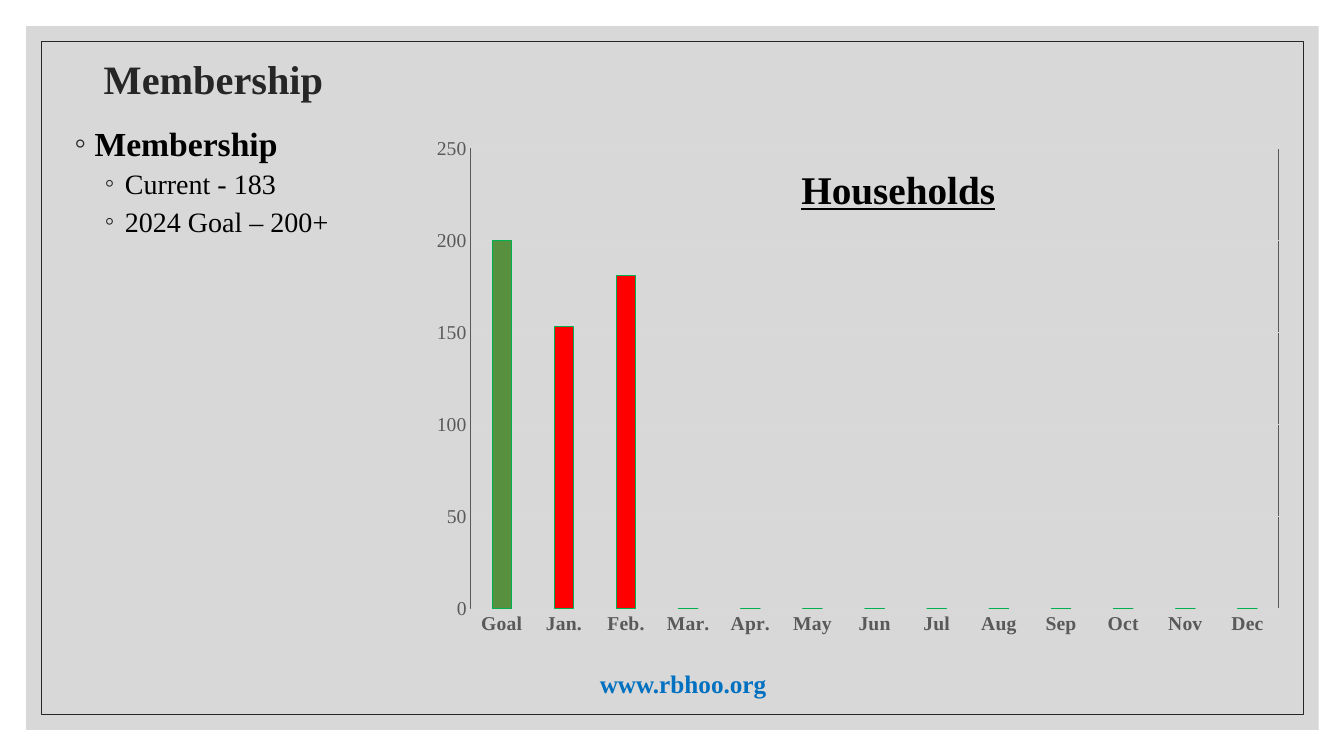
from dataclasses import dataclass

from lxml import etree
from pptx import Presentation
from pptx.chart.data import CategoryChartData
from pptx.dml.color import RGBColor
from pptx.enum.chart import XL_CHART_TYPE, XL_TICK_MARK
from pptx.enum.shapes import MSO_SHAPE
from pptx.enum.text import MSO_ANCHOR, PP_ALIGN
from pptx.oxml import parse_xml
from pptx.oxml.ns import nsdecls, qn
from pptx.util import Inches, Pt

RECTANGLE = MSO_SHAPE.RECTANGLE
TOP, MIDDLE = MSO_ANCHOR.TOP, MSO_ANCHOR.MIDDLE
LEFT, CENTER = PP_ALIGN.LEFT, PP_ALIGN.CENTER
COLUMNS = XL_CHART_TYPE.COLUMN_CLUSTERED
NO_TICK = XL_TICK_MARK.NONE

WIDTH, HEIGHT = Inches(13.33), Inches(7.5)
SERIF = "Times New Roman"
DARK, BLACK, GREY, PALE = "262626", "000000", "595959", "D9D9D9"
RED, GREEN, EDGE = "FF0000", "57903F", "00B050"


@dataclass(frozen=True)
class Area:
    left: float
    top: float
    width: float
    height: float

    def emu(self) -> tuple[int, int, int, int]:
        return (int(WIDTH * self.left / 100), int(HEIGHT * self.top / 100),
                int(WIDTH * self.width / 100), int(HEIGHT * self.height / 100))


@dataclass(frozen=True)
class Line:
    text: str
    size: float
    color: str = BLACK
    bold: bool = True
    underline: bool = False
    indent: float = 0
    spacing: float = 1
    before: float = 0


@dataclass(frozen=True)
class TextBlock:
    area: Area
    lines: tuple[Line, ...]
    align: PP_ALIGN = LEFT
    anchor: MSO_ANCHOR = TOP


PANEL = Area(1.95, 3.47, 96.17, 93.07)
FRAME = Area(3.08, 5.47, 93.92, 89.07)
CHART = Area(29.86, 15.2, 65.34, 72.53)
PLOT = {"x": 0.079, "y": 0.061, "w": 0.92, "h": 0.839}

TEXTS = (
    TextBlock(Area(6.98, 6.93, 84.32, 7.73),
              (Line("Membership", 28.8, DARK, spacing=0.9),), anchor=MIDDLE),
    TextBlock(Area(4.8, 15.2, 22.88, 69.73), (
        Line("Membership", 24, indent=0.2, spacing=1.07),
        Line("Current - 183", 20, bold=False, indent=0.5, spacing=1.07, before=1),
        Line("2024 Goal – 200+", 20, bold=False, indent=0.5, spacing=1.07, before=1),
    )),
    TextBlock(Area(1.65, 87.73, 98.35, 5.33),
              (Line("www.rbhoo.org", 18, "0070C0"),), align=CENTER),
    TextBlock(Area(58.89, 21.2, 17.7, 7.6),
              (Line("Households", 28, underline=True),)),
)

HOUSEHOLDS = {"Goal": 200, "Jan.": 153, "Feb.": 181} | dict.fromkeys(
    ("Mar.", "Apr.", "May", "Jun", "Jul", "Aug", "Sep", "Oct", "Nov", "Dec"), 0)


def rgb(color: str) -> RGBColor:
    return RGBColor.from_string(color)


def paint(fill, color: str) -> None:
    fill.solid()
    fill.fore_color.rgb = rgb(color)


def stroke(line, color: str, width: float) -> None:
    paint(line.fill, color)
    line.width = Pt(width)


def style(font, size: float, color: str, bold: bool, name: str = SERIF) -> None:
    font.name, font.size, font.bold = name, Pt(size), bold
    font.color.rgb = rgb(color)


def add_backdrop(s) -> None:
    panel = s.shapes.add_shape(RECTANGLE, *PANEL.emu())
    panel.shadow.inherit = False
    paint(panel.fill, "BFBFBF")
    panel.line.fill.background()
    tint = next(panel._element.spPr.iter(qn("a:srgbClr")))
    etree.SubElement(tint, qn("a:alpha")).set("val", "60000")
    frame = s.shapes.add_shape(RECTANGLE, *FRAME.emu())
    frame.shadow.inherit = False
    frame.fill.background()
    stroke(frame.line, DARK, 0.5)


def add_bullet(p, indent: float) -> None:
    pPr = p._p.get_or_add_pPr()
    pPr.set("marL", str(Inches(indent)))
    pPr.set("indent", str(Inches(-0.2)))
    color = etree.SubElement(pPr, qn("a:buClr"))
    etree.SubElement(color, qn("a:srgbClr")).set("val", DARK)
    etree.SubElement(pPr, qn("a:buFont")).set("typeface", SERIF)
    etree.SubElement(pPr, qn("a:buChar")).set("char", "◦")


def add_text(s, block: TextBlock) -> None:
    tf = s.shapes.add_textbox(*block.area.emu()).text_frame
    tf.word_wrap = True
    tf.vertical_anchor = block.anchor
    for i, line in enumerate(block.lines):
        p = tf.add_paragraph() if i else tf.paragraphs[0]
        if line.indent:
            add_bullet(p, line.indent)
        p.alignment = block.align
        p.line_spacing = line.spacing
        p.space_before = Pt(line.before)
        r = p.add_run()
        r.text = line.text
        style(r.font, line.size, line.color, line.bold)
        r.font.underline = line.underline


def frame_plot(chart) -> None:
    plot_area = chart._chartSpace.chart.plotArea
    for old in plot_area.findall(qn("c:layout")):
        plot_area.remove(old)
    sizes = "".join(f'<c:{key} val="{share}"/>' for key, share in PLOT.items())
    plot_area.insert(0, parse_xml(
        f'<c:layout {nsdecls("c")}><c:manualLayout><c:layoutTarget val="inner"/>'
        f'<c:xMode val="edge"/><c:yMode val="edge"/>{sizes}'
        '</c:manualLayout></c:layout>'))
    plot_area.append(parse_xml(
        f'<c:spPr {nsdecls("c", "a")}><a:noFill/><a:ln w="{Pt(0.75)}"><a:solidFill>'
        f'<a:srgbClr val="{GREY}"/></a:solidFill></a:ln></c:spPr>'))


def add_households_chart(s) -> None:
    data = CategoryChartData()
    data.categories = list(HOUSEHOLDS)
    data.add_series("Series 1", list(HOUSEHOLDS.values()))
    chart = s.shapes.add_chart(COLUMNS, *CHART.emu(), data).chart
    chart.has_title = chart.has_legend = False
    style(chart.font, 10, BLACK, False, "Quicksand")

    plot = chart.plots[0]
    plot.gap_width, plot.overlap, plot.vary_by_categories = 219, -27, False
    series = plot.series[0]
    series.invert_if_negative = False
    goal = series.points[0]
    for bar, color in ((series, RED), (goal, GREEN)):
        paint(bar.format.fill, color)
        stroke(bar.format.line, EDGE, 0.75)

    months, count = chart.category_axis, chart.value_axis
    for axis, bold in ((months, True), (count, False)):
        axis.major_tick_mark = axis.minor_tick_mark = NO_TICK
        style(axis.tick_labels.font, 14, GREY, bold)
    stroke(months.format.line, PALE, 0.75)
    count.format.line.fill.background()
    count.minimum_scale, count.maximum_scale, count.major_unit = 0, 250, 50
    count.has_major_gridlines = True
    stroke(count.major_gridlines.format.line, PALE, 0.75)
    frame_plot(chart)


def main() -> None:
    prs = Presentation()
    prs.slide_width, prs.slide_height = WIDTH, HEIGHT
    s = prs.slides.add_slide(prs.slide_layouts[6])
    add_backdrop(s)
    add_households_chart(s)
    for block in TEXTS:
        add_text(s, block)
    prs.save("out.pptx")


if __name__ == "__main__":
    main()
